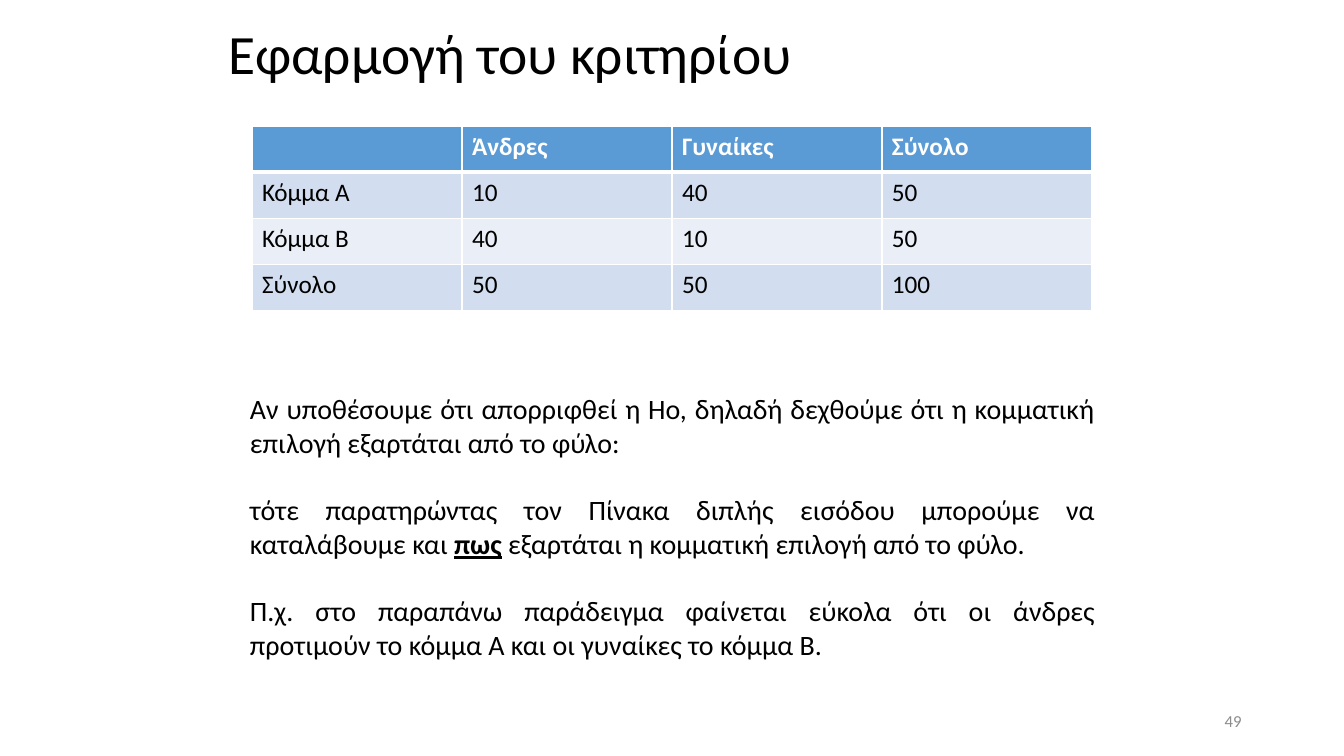
from lxml import etree
from pptx import Presentation
from pptx.dml.color import RGBColor
from pptx.enum import text
from pptx.oxml import ns
from pptx.util import Pt

COLORS = {
    "black": "000000", "white": "FFFFFF", "gray": "8C8C8C",
    "header": "5B9BD5", "odd": "D2DEEF", "even": "EAEFF7",
}
FONT = "Calibri"

presentation = Presentation()
presentation.slide_width, presentation.slide_height = Pt(960), Pt(540)
slide = presentation.slides.add_slide(presentation.slide_layouts[6])


def add_run(paragraph, content, size, color, **format_values):
    run = paragraph.add_run()
    run.text = content
    values = {"name": FONT, "size": Pt(size), **format_values}
    for name, value in values.items():
        setattr(run.font, name, value)
    run.font.color.rgb = RGBColor.from_string(COLORS[color])


def add_text_frame(left, top, width, height, **format_values):
    box = slide.shapes.add_textbox(Pt(left), Pt(top), Pt(width), Pt(height))
    for name, value in {"word_wrap": True, **format_values}.items():
        setattr(box.text_frame, name, value)
    return box.text_frame


# Title and slide number
middle = text.MSO_ANCHOR.MIDDLE
title = add_text_frame(156, 21.6, 648, 38, vertical_anchor=middle).paragraphs[0]
title.line_spacing = 0.9
add_run(title, "Εφαρμογή του κριτηρίου", 39.6, "black")

number = add_text_frame(678, 500.5, 216, 28.8, vertical_anchor=middle).paragraphs[0]
number.alignment = text.PP_ALIGN.RIGHT
add_run(number, "49", 12, "gray")

# Two-way table
ROWS = [
    ["", "Άνδρες", "Γυναίκες", "Σύνολο"],
    ["Κόμμα Α", "10", "40", "50"],
    ["Κόμμα Β", "40", "10", "50"],
    ["Σύνολο", "50", "50", "100"],
]
table = slide.shapes.add_table(4, 4, Pt(180), Pt(90), Pt(600), Pt(132)).table
for row in table.rows:
    row.height = Pt(33)

for row_index, labels in enumerate(ROWS):
    is_header = row_index == 0
    fill = "header" if is_header else "odd" if row_index % 2 else "even"
    for column_index, label in enumerate(labels):
        cell = table.cell(row_index, column_index)
        cell.fill.solid()
        cell.fill.fore_color.rgb = RGBColor.from_string(COLORS[fill])
        if label:
            add_run(cell.text_frame.paragraphs[0], label, 18,
                    "white" if is_header else "black", bold=is_header)

        # White borders, with a thick line under the header
        border_widths = {
            "lnL": 1, "lnR": 1,
            "lnT": 3 if row_index == 1 else 1,
            "lnB": 3 if is_header else 1,
        }
        properties = cell._tc.get_or_add_tcPr()
        for position, (side, width) in enumerate(border_widths.items()):
            line = etree.Element(ns.qn(f"a:{side}"), w=str(Pt(width)))
            solid = etree.SubElement(line, ns.qn("a:solidFill"))
            etree.SubElement(solid, ns.qn("a:srgbClr"), val=COLORS["white"])
            properties.insert(position, line)

# Explanation
EXPLANATION = [
    [("Αν υποθέσουμε ότι απορριφθεί η Ηο, δηλαδή δεχθούμε ότι η κομματική "
      "επιλογή εξαρτάται από το φύλο:", False)],
    [("τότε παρατηρώντας τον Πίνακα διπλής εισόδου μπορούμε να καταλάβουμε και ", False),
     ("πως", True),
     (" εξαρτάται η κομματική επιλογή από το φύλο.", False)],
    [("Π.χ. στο παραπάνω παράδειγμα φαίνεται εύκολα ότι οι άνδρες προτιμούν "
      "το κόμμα Α και οι γυναίκες το κόμμα Β.", False)],
]
explanation = add_text_frame(171.5, 252, 618, 225, margin_top=Pt(28))
for index, runs in enumerate(EXPLANATION):
    paragraph = explanation.add_paragraph() if index else explanation.paragraphs[0]
    paragraph.alignment = text.PP_ALIGN.JUSTIFY
    if index:
        paragraph.space_before = Pt(24)
    for content, emphasis in runs:
        add_run(paragraph, content, 20, "black", bold=emphasis, underline=emphasis)

presentation.save("out.pptx")
